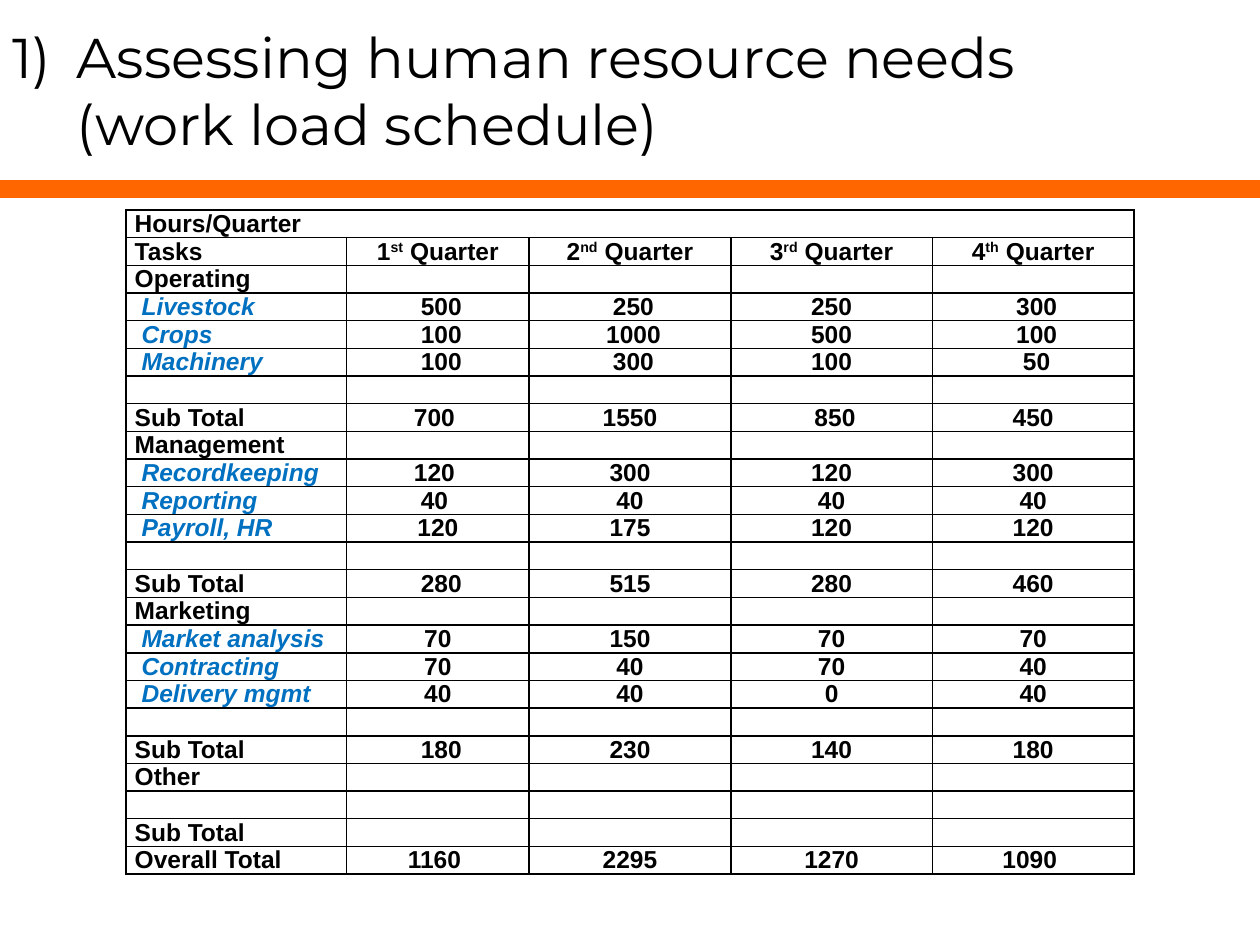
from pptx import Presentation
from pptx.dml.color import RGBColor
from pptx.enum.shapes import MSO_CONNECTOR
from pptx.enum.text import MSO_ANCHOR, MSO_AUTO_SIZE, PP_ALIGN
from pptx.oxml.ns import qn
from pptx.util import Pt
from lxml.etree import SubElement

COLORS = {"text": "000000", "task": "0070C0", "rule": "FF6600"}
COL_WIDTHS = [126, 104.4, 115.2, 115.2, 115.2]
ROW_HEIGHT = 15.8
TITLE_INDENT = 36.7
ORDINALS = ["st", "nd", "rd", "th"]

# Each row is a label and its four quarters; a leading space marks a task.
HOURS = [
    ["Operating"],
    [" Livestock", " 500", " 250", "250", " 300"],
    [" Crops", " 100", " 1000", "500", " 100"],
    [" Machinery", " 100", " 300", "100", " 50"],
    [],
    ["Sub Total", "700 ", "1550", " 850", "450"],
    ["Management"],
    [" Recordkeeping", "120 ", "300", "120", "300"],
    [" Reporting", "40 ", "40", "40", "40"],
    [" Payroll, HR", "120", "175", "120", "120"],
    [],
    ["Sub Total", " 280", "515", "280", "460"],
    ["Marketing"],
    [" Market analysis", "70", "150", "70", "70"],
    [" Contracting", "70", "40", "70", "40"],
    [" Delivery mgmt", "40", "40", "0", "40"],
    [],
    ["Sub Total", " 180", "230", "140", "180"],
    ["Other"],
    [],
    ["Sub Total"],
    ["Overall Total", "1160 ", "2295", "1270", "1090 "],
]


def rgb(name):
    return RGBColor.from_string(COLORS[name])


def add_text(p, text, size=14, font="Arial", color="text", bold=False,
             italic=False, raised=False):
    r = p.add_run()
    r.text = text
    r.font.size = Pt(size)
    r.font.name = font
    r.font.bold = bold
    r.font.italic = italic
    r.font.color.rgb = rgb(color)
    if raised:
        r._r.get_or_add_rPr().set("baseline", "30000")


def add_title(slide):
    sp = slide.shapes.title
    sp.left, sp.top, sp.width, sp.height = Pt(0), Pt(6), Pt(720), Pt(90)
    tf = sp.text_frame
    tf.word_wrap = True
    tf.auto_size = MSO_AUTO_SIZE.NONE
    tf.vertical_anchor = MSO_ANCHOR.MIDDLE
    p = tf.paragraphs[0]
    p.alignment = PP_ALIGN.LEFT
    pPr = p._p.get_or_add_pPr()
    pPr.set("marL", str(Pt(TITLE_INDENT)))
    pPr.set("indent", str(-Pt(TITLE_INDENT)))
    style = {"size": 32, "font": "Montserrat"}
    add_text(p, "1)\tAssessing human resource needs", **style)
    p.add_line_break()
    add_text(p, "(work load schedule)", **style)


def add_rule(slide, y, width):
    line = slide.shapes.add_connector(
        MSO_CONNECTOR.STRAIGHT, Pt(0), Pt(y), Pt(width), Pt(y))
    line.line.color.rgb = rgb("rule")
    line.line.width = Pt(10)
    SubElement(line._element.spPr, qn("a:effectLst"))


def set_borders(cell):
    tcPr = cell._tc.get_or_add_tcPr()
    for i, side in enumerate(["lnL", "lnR", "lnT", "lnB"]):
        ln = tcPr.makeelement(qn(f"a:{side}"), {"w": str(Pt(1))})
        fill = SubElement(ln, qn("a:solidFill"))
        SubElement(fill, qn("a:srgbClr"), val=COLORS["text"])
        tcPr.insert(i, ln)


def format_cell(cell, align):
    """Set margins, fill and borders, and return the cell's paragraph."""
    cell.margin_left = cell.margin_right = Pt(5)
    cell.margin_top = cell.margin_bottom = Pt(0)
    cell.fill.background()
    set_borders(cell)
    p = cell.text_frame.paragraphs[0]
    p.alignment = align
    p.line_spacing = Pt(ROW_HEIGHT)
    return p


def fill_cell(p, content, is_task):
    """Write a string, or a list of parts whose second one is raised."""
    if not content:
        # An empty cell takes its height from the paragraph's end mark.
        SubElement(p._p, qn("a:endParaRPr"), sz="1200")
        return
    parts = [content] if isinstance(content, str) else content
    for i, part in enumerate(parts):
        add_text(p, part, bold=True, italic=is_task, raised=i == 1,
                 color="task" if is_task else "text")


def add_hours_table(slide):
    quarters = [[str(n), suffix, " Quarter"]
                for n, suffix in enumerate(ORDINALS, 1)]
    rows = [["Hours/Quarter"], ["Tasks", *quarters], *HOURS]
    table = slide.shapes.add_table(
        len(rows), len(COL_WIDTHS), Pt(72), Pt(120),
        Pt(sum(COL_WIDTHS)), Pt(ROW_HEIGHT * len(rows))).table
    table.first_row = table.horz_banding = False
    for col, width in zip(table.columns, COL_WIDTHS):
        col.width = Pt(width)
    for i, row in enumerate(rows):
        table.rows[i].height = Pt(ROW_HEIGHT)
        for j in range(len(COL_WIDTHS)):
            content = row[j] if j < len(row) else ""
            align = PP_ALIGN.CENTER if j else PP_ALIGN.LEFT
            p = format_cell(table.cell(i, j), align)
            is_task = j == 0 and content[:1].isspace()
            fill_cell(p, content, is_task)
    table.cell(0, 0).merge(table.cell(0, len(COL_WIDTHS) - 1))


def main():
    prs = Presentation()
    prs.slide_width, prs.slide_height = Pt(720), Pt(540)
    slide = prs.slides.add_slide(prs.slide_layouts[5])
    add_rule(slide, 108, 720)
    add_hours_table(slide)
    add_title(slide)
    prs.save("out.pptx")


if __name__ == "__main__":
    main()
